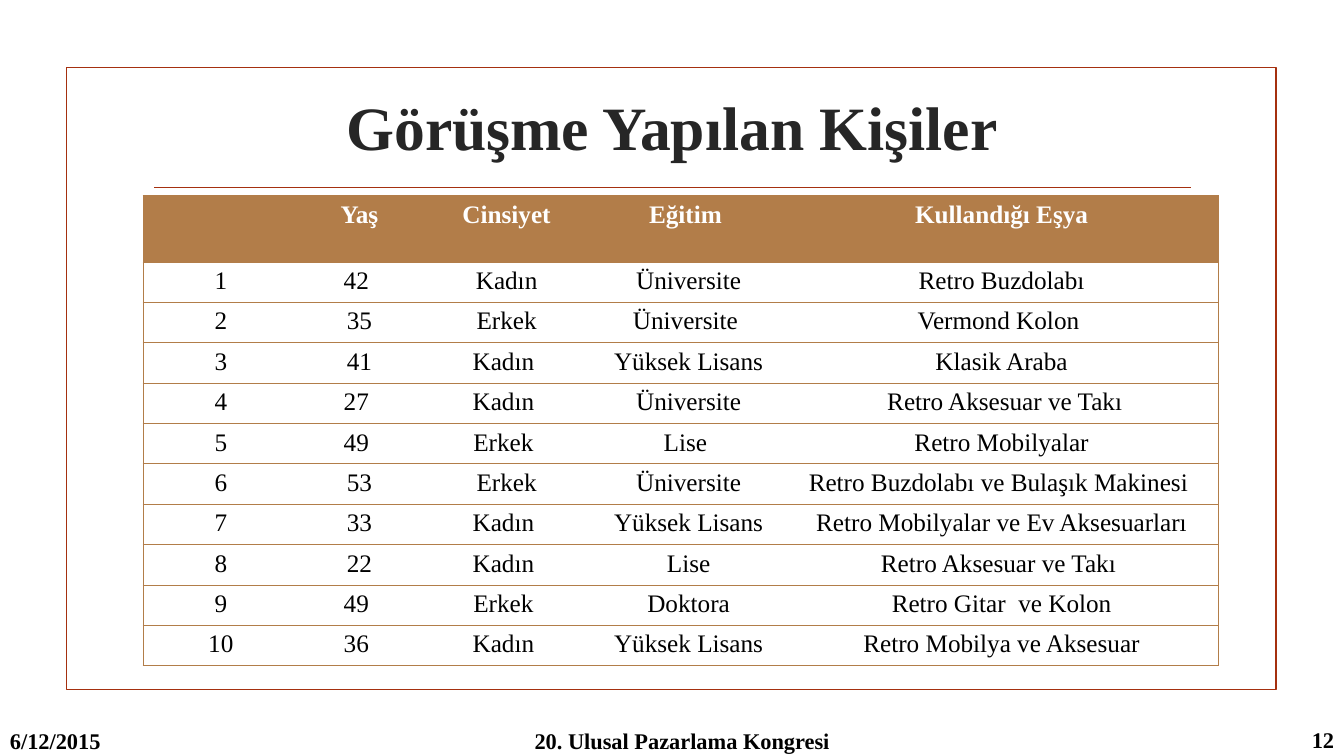
from dataclasses import dataclass
from lxml.etree import SubElement
from pptx import Presentation
from pptx.dml.color import RGBColor
from pptx.enum.shapes import MSO_CONNECTOR, MSO_SHAPE
from pptx.enum.text import MSO_ANCHOR, PP_ALIGN
from pptx.oxml.ns import qn
from pptx.util import Inches, Pt


@dataclass(frozen=True)
class Theme:
    font: str = "Times New Roman"
    accent: str = "A5300F"
    table: str = "B27D49"
    title: str = "262626"
    text: str = "000000"
    header: str = "FFFFFF"
    title_size: float = 44
    table_size: float = 18
    footer_size: float = 16
    frame_line: float = 1.25
    table_line: float = 0.75


theme = Theme()


def write(frame, text, size, color, bold, align):
    frame.text = text
    para = frame.paragraphs[0]
    para.alignment = align
    for span in para.runs:
        span.font.name = theme.font
        span.font.size = Pt(size)
        span.font.bold = bold
        span.font.color.rgb = RGBColor.from_string(color)


def set_border(cell, side, visible):
    line = SubElement(cell._tc.get_or_add_tcPr(), qn(f"a:{side}"))
    line.set("w", str(Pt(theme.table_line)))
    if visible:
        fill = SubElement(line, qn("a:solidFill"))
        SubElement(fill, qn("a:srgbClr")).set("val", theme.table)
    else:
        SubElement(line, qn("a:noFill"))


deck = Presentation()
deck.slide_width = Inches(13.33)
deck.slide_height = Inches(7.5)
page = deck.slides.add_slide(deck.slide_layouts[6])

frame_box = page.shapes.add_shape(
    MSO_SHAPE.RECTANGLE, Inches(0.66), Inches(0.67), Inches(12), Inches(6.17))
frame_box.shadow.inherit = False
frame_box.fill.background()

title_rule = page.shapes.add_connector(
    MSO_CONNECTOR.STRAIGHT, Inches(1.53), Inches(1.86), Inches(11.81), Inches(1.86))
SubElement(title_rule._element.spPr, qn("a:effectLst"))

for outlined in (frame_box, title_rule):
    outlined.line.color.rgb = RGBColor.from_string(theme.accent)
    outlined.line.width = Pt(theme.frame_line)

labels = [
    ("Görüşme Yapılan Kişiler", 1.42, 0.72, 10.5, 1.05,
     theme.title_size, theme.title, PP_ALIGN.CENTER),
    ("6/12/2015", 0, 7.19, 1.75, 0.31, theme.footer_size, theme.text, PP_ALIGN.LEFT),
    ("12", 12.74, 7.18, 0.59, 0.31, theme.footer_size, theme.text, PP_ALIGN.RIGHT),
    ("20. Ulusal Pazarlama Kongresi", 2.77, 7.19, 7.99, 0.31,
     theme.footer_size, theme.text, PP_ALIGN.CENTER),
]
for text, left, top, width, height, size, color, align in labels:
    box = page.shapes.add_textbox(Inches(left), Inches(top), Inches(width), Inches(height))
    box.text_frame.word_wrap = True
    box.text_frame.vertical_anchor = MSO_ANCHOR.MIDDLE
    write(box.text_frame, text, size, color, True, align)

people = [
    ("", "Yaş", "Cinsiyet", "Eğitim ", "Kullandığı Eşya"),
    ("1", "42 ", "Kadın", "Üniversite", "Retro Buzdolabı"),
    ("2", "35", "Erkek", "Üniversite ", "Vermond Kolon "),
    ("3", "41", "Kadın ", "Yüksek Lisans", "Klasik Araba"),
    ("4", "27 ", "Kadın ", "Üniversite", " Retro Aksesuar ve Takı"),
    ("5", "49 ", "Erkek ", "Lise ", "Retro Mobilyalar"),
    ("6", "53", "Erkek", "Üniversite", "Retro Buzdolabı ve Bulaşık Makinesi "),
    ("7", "33", "Kadın ", "Yüksek Lisans", "Retro Mobilyalar ve Ev Aksesuarları"),
    ("8", "22", "Kadın ", "Lise", "Retro Aksesuar ve Takı "),
    ("9", "49 ", "Erkek ", "Doktora", "Retro Gitar  ve Kolon"),
    ("10", "36 ", "Kadın ", "Yüksek Lisans", "Retro Mobilya ve Aksesuar"),
]
column_widths = [1.54, 1.21, 1.71, 1.9, 4.31]
row_heights = [0.66] + [0.4] * (len(people) - 1)
table = page.shapes.add_table(
    len(people), len(column_widths), Inches(1.42), Inches(1.94),
    Inches(sum(column_widths)), Inches(sum(row_heights))).table
table.horz_banding = False
for column, width in zip(table.columns, column_widths):
    column.width = Inches(width)

last_column = len(column_widths) - 1
for row_index, person in enumerate(people):
    table.rows[row_index].height = Inches(row_heights[row_index])
    is_header = row_index == 0
    for column_index, value in enumerate(person):
        cell = table.cell(row_index, column_index)
        write(cell.text_frame, value, theme.table_size,
              theme.header if is_header else theme.text, is_header, PP_ALIGN.CENTER)
        set_border(cell, "lnL", column_index == 0)
        set_border(cell, "lnR", column_index == last_column)
        set_border(cell, "lnT", True)
        set_border(cell, "lnB", True)
        if is_header:
            cell.fill.solid()
            cell.fill.fore_color.rgb = RGBColor.from_string(theme.table)
        else:
            cell.fill.background()

deck.save("out.pptx")
